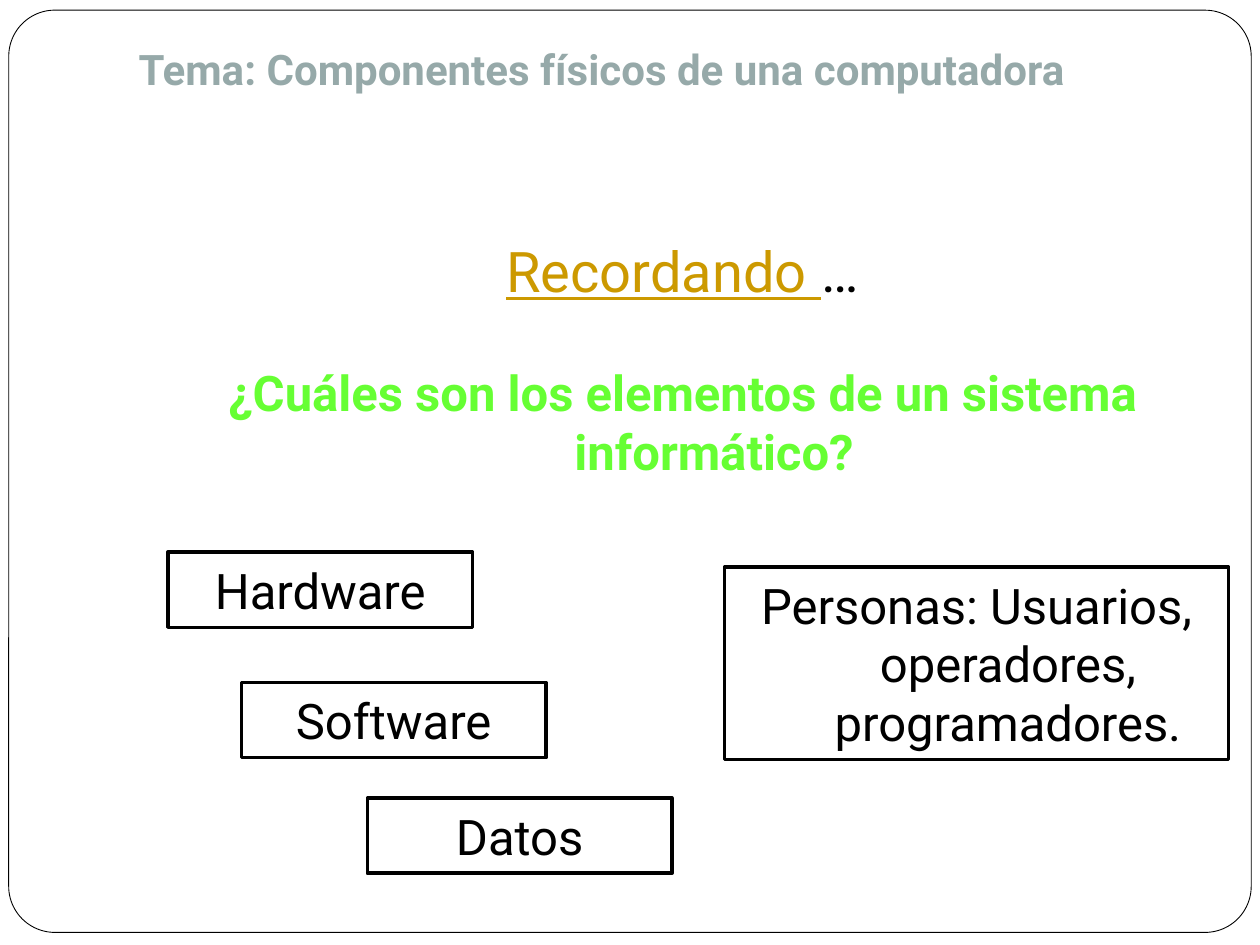
"""Build a slide that recalls the elements of a computer system."""
from pptx import Presentation
from pptx import util as u
from pptx.dml.color import RGBColor
from pptx.enum import shapes, text

FONT = "Roboto"
BLACK, WHITE = "000000", "FFFFFF"
FRAME = (5, 5.8, 710, 527)
TITLE = ("Tema: Componentes físicos de una computadora", (72, 21, 600, 36))
TITLE_FORMAT = {"size": 24, "bold": True, "color": "96A9A9"}
RECALL_BOX = (72, 132, 636, 45)
RECALL = [
    ("Recordando ", {"size": 32, "underline": True, "color": "CC9900"}),
    ("…", {"size": 32, "underline": False, "color": BLACK}),
]
QUESTION = ("¿Cuáles son los elementos de un sistema informático?", (72, 204, 636, 74))
QUESTION_FORMAT = {"size": 28, "bold": True, "color": "66FF33"}
ELEMENTS = [
    ("Hardware", (96, 315.5, 174, 43)),
    ("Software", (138, 390, 174, 43)),
    ("Datos", (210, 456, 174, 43)),
    ("Personas: Usuarios, operadores, programadores.", (414, 324, 288, 110)),
]
ELEMENT_FORMAT = {"size": 28, "color": BLACK}


def color(value):
    return RGBColor.from_string(value)


def points(box):
    return [u.Pt(value) for value in box]


def write(shape, runs, align=text.PP_ALIGN.CENTER, hanging=0):
    frame = shape.text_frame
    frame.word_wrap = True
    frame.auto_size = text.MSO_AUTO_SIZE.NONE
    frame.vertical_anchor = text.MSO_ANCHOR.MIDDLE
    paragraph = frame.paragraphs[0]
    paragraph.alignment = align
    if hanging:
        properties = paragraph._p.get_or_add_pPr()
        properties.set("marL", str(u.Pt(hanging)))
        properties.set("indent", str(u.Pt(-hanging)))
    for words, values in runs:
        run = paragraph.add_run()
        run.text = words
        run.font.name = FONT
        for name, value in values.items():
            if name == "color":
                run.font.color.rgb = color(value)
            else:
                setattr(run.font, name, u.Pt(value) if name == "size" else value)


def add_outline(slide, kind, box, width):
    shape = slide.shapes.add_shape(kind, *points(box))
    shape.shadow.inherit = False
    shape.line.color.rgb = color(BLACK)
    shape.line.width = u.Pt(width)
    shape.fill.background()
    return shape


def main():
    presentation = Presentation()
    presentation.slide_width, presentation.slide_height = points((720, 540))
    slide = presentation.slides.add_slide(presentation.slide_layouts[5])

    frame = add_outline(slide, shapes.MSO_SHAPE.ROUNDED_RECTANGLE, FRAME, 0.5)
    frame.adjustments[0] = 0.05
    frame.fill.solid()
    frame.fill.fore_color.rgb = color(WHITE)

    title = slide.shapes.title
    words, box = TITLE
    title.left, title.top, title.width, title.height = points(box)
    write(title, [(words, TITLE_FORMAT)], text.PP_ALIGN.LEFT)
    frame.element.addnext(title.element)

    words, box = QUESTION
    question = slide.shapes.add_textbox(*points(box))
    write(question, [(words, QUESTION_FORMAT)], hanging=36)
    write(slide.shapes.add_textbox(*points(RECALL_BOX)), RECALL)

    for words, box in ELEMENTS:
        shape = add_outline(slide, shapes.MSO_SHAPE.RECTANGLE, box, 2)
        write(shape, [(words, ELEMENT_FORMAT)], hanging=36)

    presentation.save("out.pptx")


if __name__ == "__main__":
    main()
